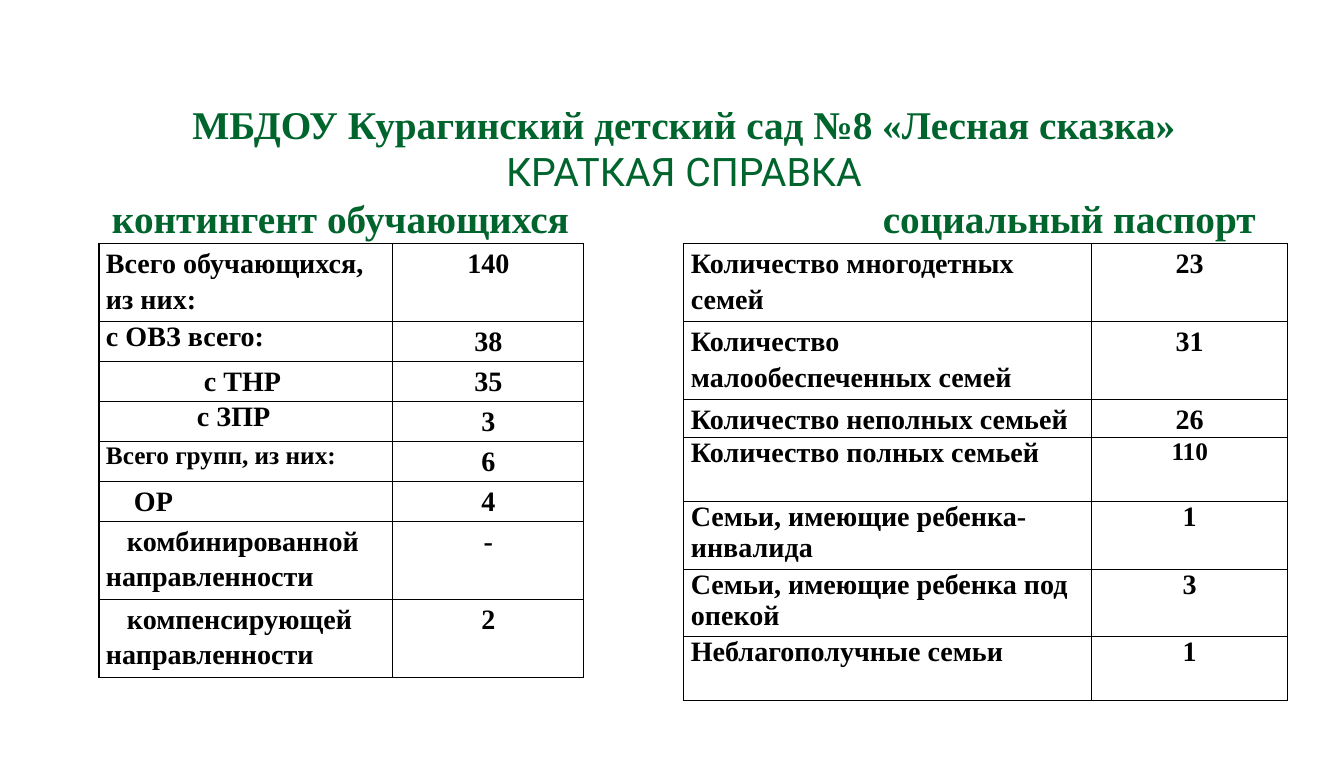
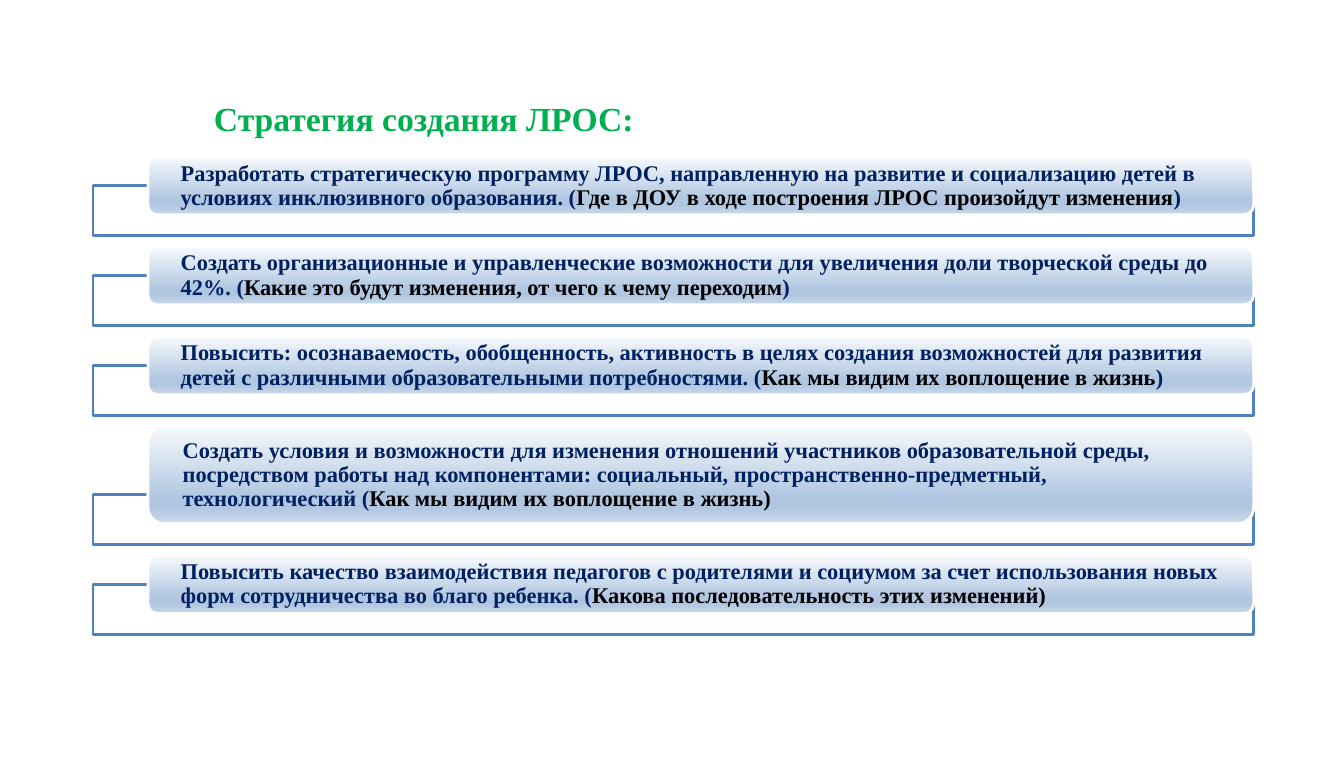
from dataclasses import dataclass

from lxml import etree
from pptx import Presentation
from pptx import util as u
from pptx.dml.color import RGBColor
from pptx.enum import shapes, text
from pptx.oxml.ns import qn

SCALE = 914400 / 101


@dataclass(frozen=True)
class Theme:
    serif: str = "Times New Roman"
    sans: str = "Roboto"
    dark_green: str = "00642D"
    green: str = "00B050"
    navy: str = "002060"
    black: str = "000000"
    white: str = "FFFFFF"
    blue: str = "4F81BD"
    card_stops: tuple = ((0, "F6F9FC"), (74, "B0C6E1"), (83, "B0C6E1"), (100, "CAD9EB"))
    heading: int = 28
    subheading: int = 24
    cell: int = 20
    small_cell: int = 18
    card: int = 16


T = Theme()

# label, value, first-line indent, label spacing, value spacing, label size, value size
PUPILS = [
    ("Всего обучающихся, из них:", "140", 0, 1.15, 1.15, T.cell, T.cell),
    ("с ОВЗ всего:", "38", 0, 1, 1.15, T.cell, T.cell),
    ("с ТНР", "35", 98, 1.15, 1.15, T.cell, T.cell),
    ("с ЗПР", "3", 91, 1, 1.15, T.cell, T.cell),
    ("Всего групп, из них:", "6", 0, 1, 1.15, T.small_cell, T.cell),
    ("ОР", "4", 28, 1.15, 1.15, T.cell, T.cell),
    ("комбинированной направленности", "-", 21, 1.15, 1.15, T.cell, T.cell),
    ("компенсирующей направленности", "2", 21, 1.15, 1.15, T.cell, T.cell),
]
FAMILIES = [
    ("Количество многодетных семей", "23", 0, 1.15, 1.15, T.cell, T.cell),
    ("Количество малообеспеченных семей", "31", 0, 1.15, 1.15, T.cell, T.cell),
    ("Количество неполных семьей", "26", 0, 1.15, 1.15, T.cell, T.cell),
    ("Количество полных семьей", "110", 0, 1, 1, T.cell, T.small_cell),
    ("Семьи, имеющие ребенка-инвалида", "1", 0, 1, 1, T.cell, T.cell),
    ("Семьи, имеющие ребенка под опекой", "3", 0, 1, 1, T.cell, T.cell),
    ("Неблагополучные семьи", "1", 0, 1, 1, T.cell, T.cell),
]

# card height, goal, question, closing
STRATEGY = [
    (58, "Разработать стратегическую программу ЛРОС, направленную на развитие и "
         "социализацию детей в условиях инклюзивного образования. (",
     "Где в ДОУ в ходе построения ЛРОС произойдут изменения", ")"),
    (58, "Создать организационные и управленческие возможности для увеличения доли "
         "творческой среды до 42%. (",
     "Какие это будут изменения, от чего к чему переходим", ")"),
    (58, "Повысить: осознаваемость, обобщенность, активность в целях создания "
         "возможностей для развития детей с различными образовательными потребностями. (",
     "Как мы видим их воплощение в жизнь", ")"),
    (97, "Создать условия и возможности для изменения отношений участников "
         "образовательной среды, посредством работы над компонентами: социальный, "
         "пространственно-предметный, технологический (",
     "Как мы видим их воплощение в жизнь)", ""),
    (58, "Повысить качество взаимодействия педагогов с родителями и социумом за счет "
         "использования новых форм сотрудничества во благо ребенка. (",
     "Какова последовательность этих изменений)", ""),
]


def px(n):
    return u.Emu(round(n * SCALE))


def rgb(color):
    return RGBColor.from_string(color)


def sub(parent, tag, **attrs):
    return etree.SubElement(parent, qn(tag), {k: str(v) for k, v in attrs.items()})


def write(p, words, size, color=T.black, font=T.serif, bold=True, align=None, spacing=None):
    """Add one run to a paragraph, formatting the paragraph where asked."""
    if align is not None:
        p.alignment = align
    if spacing is not None:
        p.line_spacing = float(spacing)
    r = p.add_run()
    r.text = words
    r.font.size, r.font.name, r.font.bold = u.Pt(size), font, bold
    r.font.color.rgb = rgb(color)


def set_frame(tf, anchor, left=0, right=0):
    tf.word_wrap = True
    tf.auto_size = text.MSO_AUTO_SIZE.NONE
    tf.vertical_anchor = anchor
    tf.margin_left, tf.margin_right = px(left), px(right)
    tf.margin_top = tf.margin_bottom = 0


def place_title(s, box, anchor, inset=0):
    title = s.shapes.title
    title.left, title.top, title.width, title.height = map(px, box)
    set_frame(title.text_frame, anchor, inset, inset)
    return title.text_frame


def border_cell(cell):
    cell.fill.background()
    tc_pr = cell._tc.get_or_add_tcPr()
    for i, side in enumerate(("a:lnL", "a:lnR", "a:lnT", "a:lnB")):
        ln = sub(tc_pr, side, w=u.Pt(1))
        sub(sub(ln, "a:solidFill"), "a:srgbClr", val=T.black)
        tc_pr.insert(i, ln)


def write_cell(cell, words, size, spacing, align, indent=0):
    cell.margin_left = cell.margin_right = px(7)
    cell.margin_top = cell.margin_bottom = 0
    p = cell.text_frame.paragraphs[0]
    write(p, words, size, align=align, spacing=spacing)
    if indent:
        p._p.get_or_add_pPr().set("indent", str(px(indent)))
    border_cell(cell)


def add_figures(s, left, top, widths, heights, rows):
    table = s.shapes.add_table(len(rows), 2, px(left), px(top),
                               px(sum(widths)), px(sum(heights))).table
    table.first_row = table.horz_banding = False
    for column, width in zip(table.columns, widths):
        column.width = px(width)
    for i, (label, value, indent, label_ls, value_ls, label_sz, value_sz) in enumerate(rows):
        table.rows[i].height = px(heights[i])
        write_cell(table.cell(i, 0), label, label_sz, label_ls, text.PP_ALIGN.LEFT, indent)
        write_cell(table.cell(i, 1), value, value_sz, value_ls, text.PP_ALIGN.CENTER)


def add_box(s, kind, box, line):
    sp = s.shapes.add_shape(kind, *map(px, box))
    sp.shadow.inherit = False
    sp.line.color.rgb = rgb(line)
    sp.line.width = u.Pt(2)
    return sp


def fill_card(sp):
    sp.fill.gradient()
    sp.fill.gradient_angle = 270
    stops = sp._element.spPr.find(".//" + qn("a:gsLst"))
    for old in list(stops):
        stops.remove(old)
    for percent, color in T.card_stops:
        sub(sub(stops, "a:gs", pos=percent * 1000), "a:srgbClr", val=color)


def add_goal(s, top, height, goal, question, closing):
    """Add a card with the open frame that hangs behind its lower edge."""
    frame = add_box(s, shapes.MSO_SHAPE.RECTANGLE, (93, top + height - 29, 1161, 50), T.blue)
    frame.fill.solid()
    frame.fill.fore_color.rgb = rgb(T.white)
    sub(frame._element.spPr.find(".//" + qn("a:srgbClr")), "a:alpha", val=90000)

    card = add_box(s, shapes.MSO_SHAPE.ROUNDED_RECTANGLE, (148, top, 1106, height), T.white)
    fill_card(card)
    tf = card.text_frame
    set_frame(tf, text.MSO_ANCHOR.MIDDLE, 30, 28)
    p = tf.paragraphs[0]
    for words, color in ((goal, T.navy), (question, T.black), (closing, T.navy)):
        if words:
            write(p, words, T.card, color, align=text.PP_ALIGN.LEFT, spacing=0.9)


def build_summary(s):
    tf = place_title(s, (12, 100, 1344, 142), text.MSO_ANCHOR.BOTTOM)
    center, left = text.PP_ALIGN.CENTER, text.PP_ALIGN.LEFT
    write(tf.paragraphs[0], "МБДОУ Курагинский детский сад №8 «Лесная сказка»",
          T.heading, T.dark_green, align=center)
    write(tf.add_paragraph(), "КРАТКАЯ СПРАВКА", T.heading, T.dark_green,
          font=T.sans, bold=False, align=center)
    p = tf.add_paragraph()
    tabs = sub(p._p.get_or_add_pPr(), "a:tabLst")
    for stop in (100, 871):
        sub(tabs, "a:tab", pos=px(stop), algn="l")
    write(p, "\tконтингент обучающихся\tсоциальный паспорт",
          T.heading, T.dark_green, align=left)

    add_figures(s, 99, 244, (294, 191), (78, 40, 40, 40, 40, 40, 78, 78), PUPILS)
    add_figures(s, 684, 244, (408, 196), (78, 78, 38, 64, 68, 67, 64), FAMILIES)


def build_strategy(s):
    tf = place_title(s, (204, 96, 1049, 44), text.MSO_ANCHOR.MIDDLE, 10)
    write(tf.paragraphs[0], "Стратегия создания ЛРОС:", T.subheading, T.green,
          align=text.PP_ALIGN.LEFT)
    top, gap = 157, 32
    for height, *words in STRATEGY:
        add_goal(s, top, height, *words)
        top += height + gap


def main():
    prs = Presentation()
    prs.slide_width, prs.slide_height = u.Inches(13.31), u.Inches(7.5)
    for build in (build_summary, build_strategy):
        build(prs.slides.add_slide(prs.slide_layouts[5]))
    prs.save("out.pptx")


if __name__ == "__main__":
    main()
